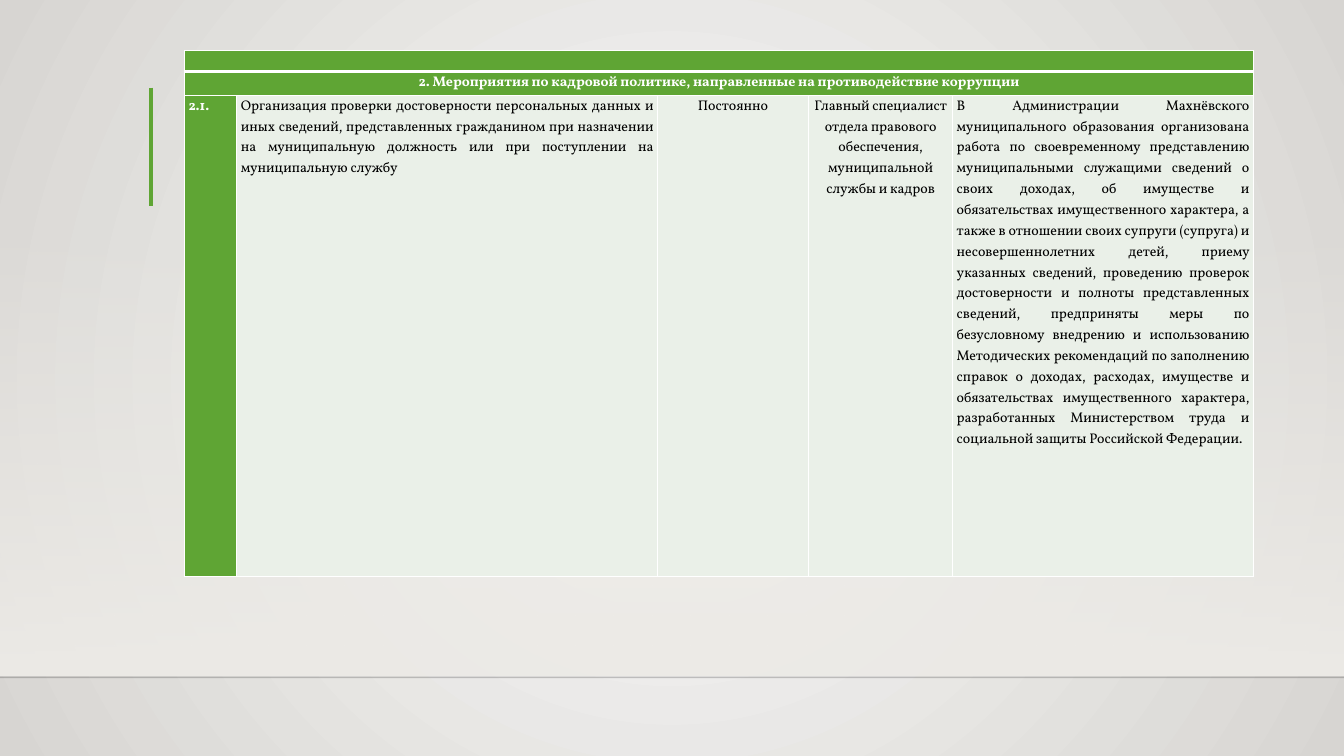
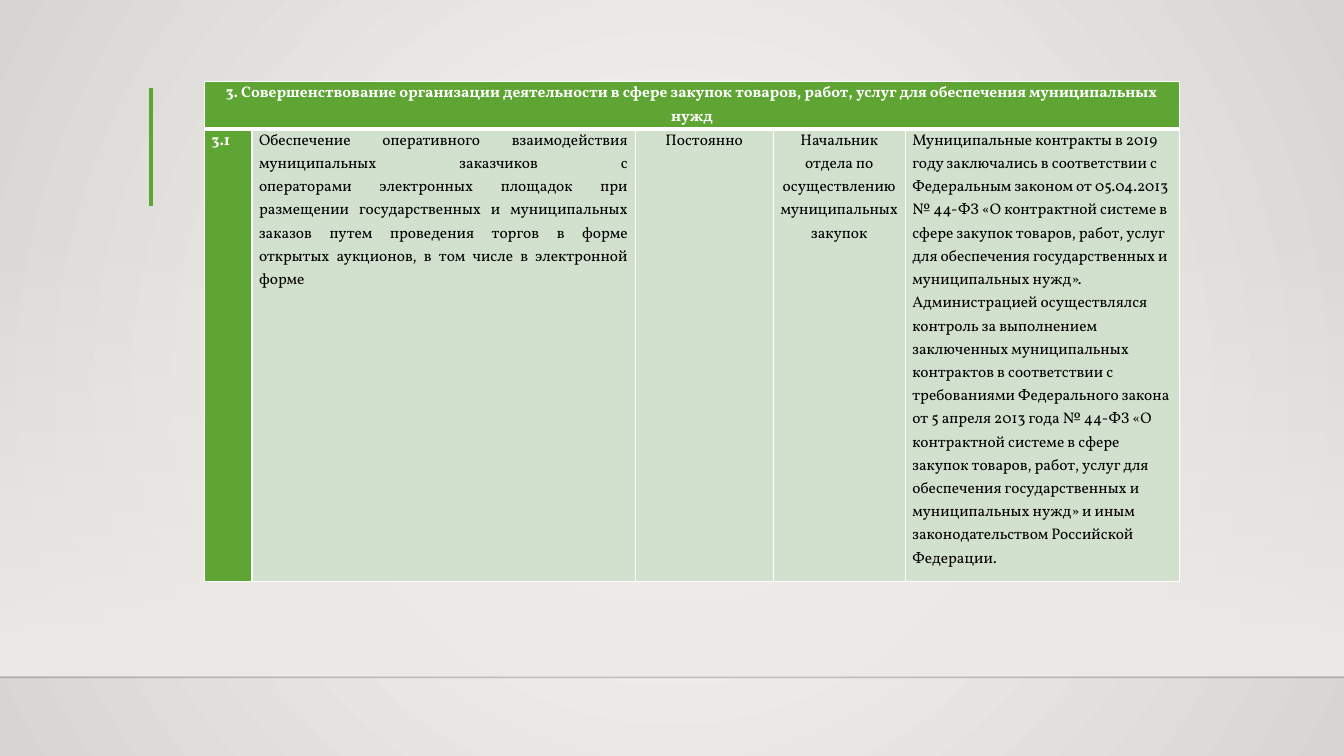
"""Build two slides of an anti-corruption action plan report."""
from lxml.etree import SubElement
from pptx import Presentation
from pptx.dml.color import RGBColor
from pptx.enum.shapes import MSO_CONNECTOR, MSO_SHAPE
from pptx.enum.text import PP_ALIGN
from pptx.oxml import parse_xml
from pptx.oxml.ns import nsdecls, qn
from pptx.util import Inches, Pt

WIDTH, HEIGHT = 13.33, 7.5
FLOOR = 6.72
FONT = "Vollkorn"
GREEN = RGBColor(0x5F, 0xA5, 0x34)
WHITE = RGBColor(0xFF, 0xFF, 0xFF)
BLACK = RGBColor(0x00, 0x00, 0x00)
FLOOR_LINE = RGBColor(0x00, 0x00, 0x01)
PALE = RGBColor(0xEA, 0xF0, 0xE8)
SOFT = RGBColor(0xD2, 0xE1, 0xCE)
SAND = RGBColor(0xED, 0xEB, 0xE7)
CENTRE = RGBColor(0xFA, 0xFA, 0xF9)
EDGE = RGBColor(0xD7, 0xD5, 0xD2)
LEFT, MIDDLE, JUSTIFIED = PP_ALIGN.LEFT, PP_ALIGN.CENTER, PP_ALIGN.JUSTIFY

TABLES = [
    {
        "origin": (1.83, 0.5),
        "columns": (0.52, 4.17, 1.5, 1.43, 2.98),
        "rows": (0.21, 0.24, 4.77),
        "size": 10, "inset": 0.04, "fill": PALE,
        "headings": ["", "2. Мероприятия по кадровой политике, направленные на противодействие коррупции"],
        "aligns": (LEFT, JUSTIFIED, MIDDLE, MIDDLE, JUSTIFIED),
        "entries": [
            "2.1.",
            "Организация проверки достоверности персональных данных и иных сведений, "
            "представленных гражданином при назначении на муниципальную должность или "
            "при поступлении на муниципальную службу",
            "Постоянно",
            "Главный специалист отдела правового обеспечения, муниципальной службы и кадров",
            "В Администрации Махнёвского муниципального образования организована работа "
            "по своевременному представлению муниципальными служащими сведений о своих "
            "доходах, об имуществе и обязательствах имущественного характера, а также в "
            "отношении своих супруги (супруга) и несовершеннолетних детей, приему указанных "
            "сведений, проведению проверок достоверности и полноты представленных сведений, "
            "предприняты меры по безусловному внедрению и использованию Методических "
            "рекомендаций по заполнению справок о доходах, расходах, имуществе и "
            "обязательствах имущественного характера, разработанных Министерством труда и "
            "социальной защиты Российской Федерации.",
        ],
    },
    {
        "origin": (2.03, 0.81),
        "columns": (0.47, 3.8, 1.37, 1.31, 2.72),
        "rows": (0.47, 4.49),
        "size": 11, "inset": 0.07, "fill": SOFT,
        "headings": ["3. Совершенствование организации деятельности в сфере закупок товаров, "
                     "работ, услуг для обеспечения муниципальных нужд"],
        "aligns": (LEFT, JUSTIFIED, MIDDLE, MIDDLE, LEFT),
        "entries": [
            "3.1",
            "Обеспечение оперативного взаимодействия муниципальных заказчиков с\n"
            "операторами электронных площадок при размещении государственных и "
            "муниципальных заказов путем проведения торгов в форме открытых аукционов, "
            "в том числе в электронной форме",
            "Постоянно",
            "Начальник отдела по осуществлению муниципальных закупок",
            "Муниципальные контракты в 2019 году заключались в соответствии с Федеральным "
            "законом от 05.04.2013 № 44-ФЗ «О контрактной системе в сфере закупок товаров, "
            "работ, услуг для обеспечения государственных и муниципальных нужд». "
            "Администрацией осуществлялся контроль за выполнением заключенных "
            "муниципальных контрактов в соответствии с требованиями Федерального закона "
            "от 5 апреля 2013 года № 44-ФЗ «О контрактной системе в сфере закупок товаров, "
            "работ, услуг для обеспечения государственных и муниципальных нужд» и иным "
            "законодательством Российской Федерации.",
        ],
    },
]


def set_opacity(element, percent):
    for color in element.iter(qn("a:srgbClr")):
        SubElement(color, qn("a:alpha"), val=str(percent * 1000))


def set_stops(fill, colors):
    fill.gradient()
    for stop, color in zip(fill.gradient_stops, colors):
        stop.color.rgb = color


def paint_background(master):
    fill = master.background.fill
    set_stops(fill, (CENTRE, EDGE))
    gradient = master.element.find(".//" + qn("p:bgPr")).find(qn("a:gradFill"))
    gradient.remove(gradient.find(qn("a:lin")))
    circle = SubElement(gradient, qn("a:path"))
    circle.set("path", "circle")
    SubElement(circle, qn("a:fillToRect"), l="50000", t="50000", r="50000", b="50000")


def add_line(slide, start, end, color, weight, opacity=100):
    line = slide.shapes.add_connector(MSO_CONNECTOR.STRAIGHT, *map(Inches, start + end))
    line.line.color.rgb = color
    line.line.width = Pt(weight)
    properties = line.element.spPr
    set_opacity(properties, opacity)
    SubElement(properties, qn("a:effectLst"))


def add_scenery(slide):
    glow = slide.shapes.add_shape(
        MSO_SHAPE.RECTANGLE, 0, Inches(2.2), Inches(WIDTH), Inches(4.5))
    glow.shadow.inherit = False
    glow.line.fill.background()
    set_stops(glow.fill, (SAND, SAND))
    glow.fill.gradient_angle = 270
    first_stop = next(glow.element.iter(qn("a:gs")))
    set_opacity(first_stop, 0)
    add_line(slide, (0, FLOOR), (WIDTH, FLOOR), FLOOR_LINE, 1, opacity=20)
    add_line(slide, (1.5, 0.87), (1.5, 2.04), GREEN, 3)


def write_text(cell, text, *, size, color, bold, align):
    paragraph = cell.text_frame.paragraphs[0]
    paragraph.alignment = align
    paragraph.line_spacing = 1.07
    if not text:
        SubElement(paragraph._p, qn("a:endParaRPr"), sz=str(size * 100))
        return
    for index, line in enumerate(text.split("\n")):
        if index:
            paragraph.add_line_break()
        run = paragraph.add_run()
        run.text = line
        run.font.name = FONT
        run.font.size = Pt(size)
        run.font.bold = bold
        run.font.color.rgb = color
    for line_break in paragraph._p.findall(qn("a:br")):
        SubElement(line_break, qn("a:rPr"), sz=str(size * 100))


def style_cell(cell, fill, inset, top, bottom):
    cell.margin_left = cell.margin_right = Inches(inset)
    cell.margin_top = cell.margin_bottom = 0
    cell.fill.solid()
    cell.fill.fore_color.rgb = fill
    properties = cell._tc.get_or_add_tcPr()
    sides = (("lnL", 1), ("lnR", 1), ("lnT", top), ("lnB", bottom))
    for position, (side, weight) in enumerate(sides):
        properties.insert(position, parse_xml(
            f'<a:{side} {nsdecls("a")} w="{Pt(weight)}"><a:solidFill>'
            f'<a:srgbClr val="{WHITE}"/></a:solidFill></a:{side}>'))


def add_plan_table(slide, plan):
    columns, rows, headings = plan["columns"], plan["rows"], plan["headings"]
    frame = slide.shapes.add_table(
        len(rows), len(columns), *map(Inches, plan["origin"] + (sum(columns), sum(rows))))
    table = frame.table
    table.first_row = table.horz_banding = False
    for column, width in zip(table.columns, columns):
        column.width = Inches(width)
    for row, height in zip(table.rows, rows):
        row.height = Inches(height)
    for row_index in range(len(rows)):
        is_heading = row_index < len(headings)
        for column_index in range(len(columns)):
            is_green = is_heading or column_index == 0
            style_cell(table.cell(row_index, column_index),
                       GREEN if is_green else plan["fill"], plan["inset"],
                       top=3 if row_index == 1 else 1, bottom=3 if row_index == 0 else 1)
    for row_index, heading in enumerate(headings):
        cell = table.cell(row_index, 0)
        cell.merge(table.cell(row_index, len(columns) - 1))
        write_text(cell, heading, size=plan["size"], color=WHITE, bold=True, align=MIDDLE)
    for index, (entry, align) in enumerate(zip(plan["entries"], plan["aligns"])):
        write_text(table.cell(len(headings), index), entry, size=plan["size"],
                   color=BLACK if index else WHITE, bold=index == 0, align=align)


def main():
    presentation = Presentation()
    presentation.slide_width, presentation.slide_height = Inches(WIDTH), Inches(HEIGHT)
    paint_background(presentation.slide_master)
    for plan in TABLES:
        slide = presentation.slides.add_slide(presentation.slide_layouts[6])
        add_scenery(slide)
        add_plan_table(slide, plan)
    presentation.save("out.pptx")


if __name__ == "__main__":
    main()
